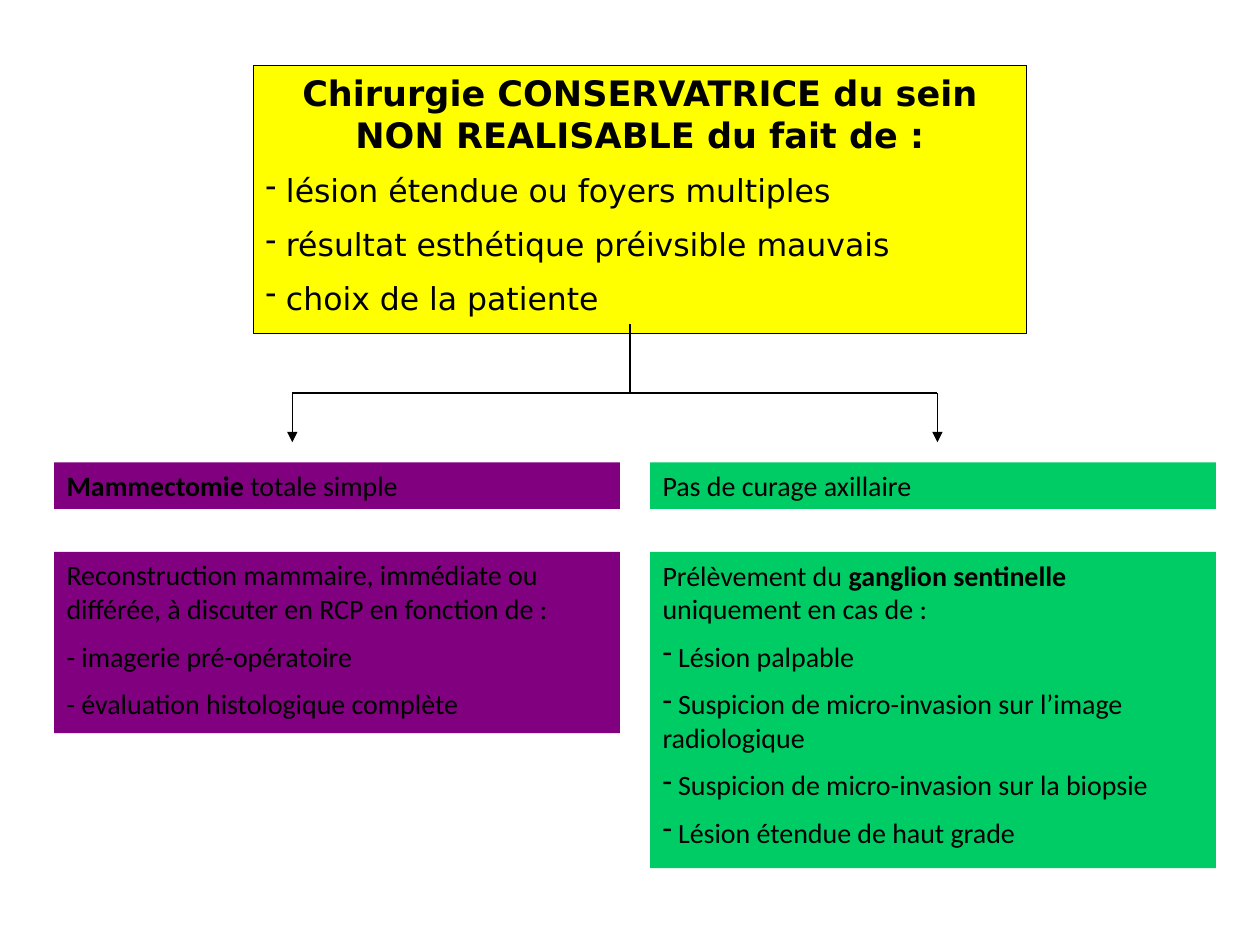
from pptx import Presentation
from pptx.dml.color import RGBColor
from pptx.enum.shapes import MSO_CONNECTOR, MSO_SHAPE
from pptx.enum.text import MSO_ANCHOR, MSO_AUTO_SIZE, PP_ALIGN
from pptx.oxml.ns import qn
from pptx.util import Inches, Pt
from lxml.etree import SubElement

BLACK = RGBColor(0x00, 0x00, 0x00)
YELLOW = RGBColor(0xFF, 0xFF, 0x00)
PURPLE = RGBColor(0x80, 0x00, 0x80)
GREEN = RGBColor(0x00, 0xCC, 0x66)

COLUMN_WIDTH = 4.49
HEADING_TOP, HEADING_HEIGHT = 3.67, 0.37
DETAIL_TOP = 4.38


def add_text(frame, spans, first=False, font="Calibri", size=16,
             align=PP_ALIGN.LEFT, bullet=None):
    """Add one paragraph made of (text, bold) spans."""
    para = frame.paragraphs[0] if first else frame.add_paragraph()
    para.alignment = align
    properties = para._p.get_or_add_pPr()
    spacing = SubElement(properties, qn("a:spcBef"))
    SubElement(spacing, qn("a:spcPct")).set("val", "50000")
    if bullet:
        SubElement(properties, qn("a:buChar")).set("char", bullet)
    for text, bold in spans:
        span = para.add_run()
        span.text = text
        span.font.name = font
        span.font.size = Pt(size)
        span.font.bold = bold
        span.font.color.rgb = BLACK


def add_panel(page, left, top, width, height, fill, outlined=False):
    """Add a filled rectangle and return its text frame."""
    box = page.shapes.add_shape(MSO_SHAPE.RECTANGLE, Inches(left), Inches(top),
                                Inches(width), Inches(height))
    box.shadow.inherit = False
    box.fill.solid()
    box.fill.fore_color.rgb = fill
    if outlined:
        box.line.color.rgb = BLACK
        box.line.width = Pt(0.75)
    else:
        box.line.fill.background()
    frame = box.text_frame
    frame.word_wrap = True
    frame.auto_size = MSO_AUTO_SIZE.SHAPE_TO_FIT_TEXT
    frame.vertical_anchor = MSO_ANCHOR.TOP
    return frame


def add_line(page, start, end, arrow=False):
    line = page.shapes.add_connector(MSO_CONNECTOR.STRAIGHT,
                                     *map(Inches, start + end))
    line.line.color.rgb = BLACK
    line.line.width = Pt(0.75)
    if arrow:
        SubElement(line.line._get_or_add_ln(), qn("a:tailEnd")).set("type", "triangle")
    SubElement(line._element.spPr, qn("a:effectLst"))


def add_indication(page, left, top, width, height):
    frame = add_panel(page, left, top, width, height, YELLOW, outlined=True)
    title = "Chirurgie CONSERVATRICE du sein NON REALISABLE du fait de :"
    add_text(frame, [(title, True)], first=True, font="DejaVu Sans", size=20,
             align=PP_ALIGN.CENTER)
    for reason in ("lésion étendue ou foyers multiples",
                   "résultat esthétique préivsible mauvais",
                   "choix de la patiente"):
        add_text(frame, [(" " + reason, False)], font="DejaVu Sans", size=18,
                 bullet="-")


def add_branches(page, left, top, width, height, stem_x, bar_y):
    """Draw a stem, a crossbar and an arrow down at each end of the bar."""
    right, bottom = left + width, top + height
    add_line(page, (stem_x, top), (stem_x, bar_y))
    add_line(page, (left, bar_y), (right, bar_y))
    for x in (left, right):
        add_line(page, (x, bar_y), (x, bottom), arrow=True)


def add_column(page, left, detail_height, fill, heading, intro, items, bullet=None):
    frame = add_panel(page, left, HEADING_TOP, COLUMN_WIDTH, HEADING_HEIGHT, fill)
    add_text(frame, heading, first=True)
    frame = add_panel(page, left, DETAIL_TOP, COLUMN_WIDTH, detail_height, fill)
    add_text(frame, intro, first=True)
    for item in items:
        add_text(frame, [(item if not bullet else " " + item, False)], bullet=bullet)


def main():
    deck = Presentation()
    deck.slide_width, deck.slide_height = Inches(10), Inches(7.5)
    page = deck.slides.add_slide(deck.slide_layouts[6])

    add_indication(page, 2.01, 0.52, 6.14, 2.13)
    add_column(
        page, 0.43, 1.44, PURPLE,
        heading=[("Mammectomie", True), (" totale simple", False)],
        intro=[("Reconstruction mammaire, immédiate ou différée, "
                "à discuter en RCP en fonction de :", False)],
        items=["- imagerie pré-opératoire", "- évaluation histologique complète"])
    add_column(
        page, 5.16, 2.51, GREEN,
        heading=[("Pas de curage axillaire", False)],
        intro=[("Prélèvement du ", False), ("ganglion sentinelle", True),
               (" uniquement en cas de :", False)],
        items=["Lésion palpable",
               "Suspicion de micro-invasion sur l’image radiologique",
               "Suspicion de micro-invasion sur la biopsie",
               "Lésion étendue de haut grade"],
        bullet="-")
    add_branches(page, 2.32, 2.57, 5.12, 0.94, stem_x=5, bar_y=3.12)

    deck.save("out.pptx")


if __name__ == "__main__":
    main()
